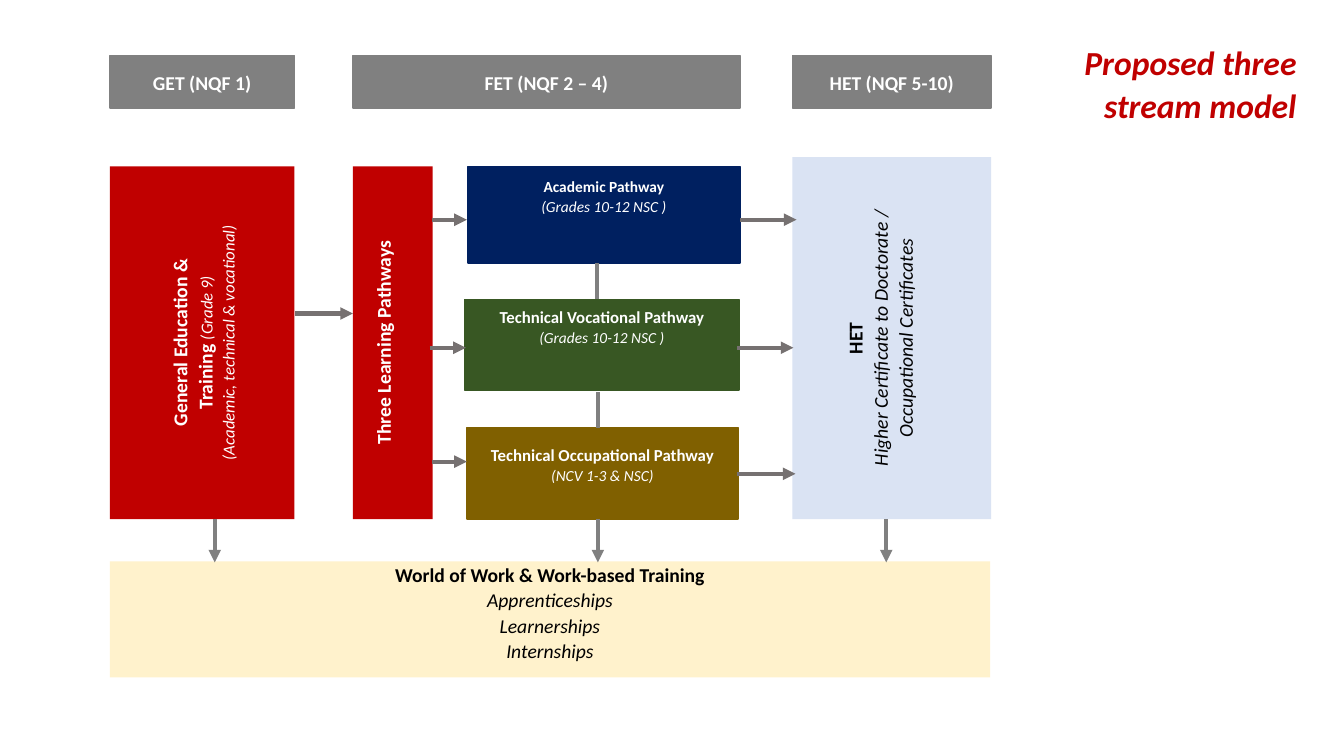
import pptx
import pptx.dml.color
import pptx.enum.shapes
import pptx.enum.text
import pptx.oxml
import pptx.util
from pptx.dml.color import RGBColor
from pptx.util import Inches

RED = RGBColor(0xC0, 0x00, 0x00)
GRAY = RGBColor(0x80, 0x80, 0x80)
ARROW_GRAY = RGBColor(0x76, 0x71, 0x71)
NAVY = RGBColor(0x00, 0x20, 0x60)
GREEN = RGBColor(0x38, 0x57, 0x23)
BROWN = RGBColor(0x80, 0x60, 0x00)
PALE_BLUE = RGBColor(0xDA, 0xE3, 0xF3)
CREAM = RGBColor(0xFF, 0xF2, 0xCC)
WHITE = RGBColor(0xFF, 0xFF, 0xFF)
BLACK = RGBColor(0x00, 0x00, 0x00)

BOLD, ITALIC = "bold", "italic"
ALIGN = pptx.enum.text.PP_ALIGN
ANCHOR = pptx.enum.text.MSO_ANCHOR


class Diagram:
    """Holds the text style and the slide being drawn."""

    font = "Calibri"
    line_spacing = 1.07

    def __init__(self, page):
        self.page = page

    def span(self, para, text, size, style, color):
        span = para.add_run()
        span.text = text
        span.font.name = self.font
        span.font.size = pptx.util.Pt(size)
        span.font.bold = BOLD in style
        span.font.italic = ITALIC in style
        span.font.color.rgb = color

    def title(self, text, left, top, width, height):
        box = self.page.shapes.title
        box.left, box.top = Inches(left), Inches(top)
        box.width, box.height = Inches(width), Inches(height)
        frame = box.text_frame
        frame.word_wrap = True
        frame.auto_size = pptx.enum.text.MSO_AUTO_SIZE.NONE
        frame.vertical_anchor = ANCHOR.TOP
        para = frame.paragraphs[0]
        para.alignment = ALIGN.RIGHT
        para.line_spacing = self.line_spacing
        para.space_before = pptx.util.Pt(2)
        self.span(para, text, 24, (BOLD, ITALIC), RED)

    def box(self, place, fill, lines, color=WHITE, outlined=False,
            upward=False, anchor=ANCHOR.MIDDLE, **margins):
        """Each line is a list of (text, size, style) spans."""
        box = self.page.shapes.add_shape(
            pptx.enum.shapes.MSO_SHAPE.RECTANGLE, *map(Inches, place))
        box.shadow.inherit = False
        box.fill.solid()
        box.fill.fore_color.rgb = fill
        if outlined:
            box.line.color.rgb = fill
            box.line.width = pptx.util.Pt(1)
        else:
            box.line.fill.background()
        frame = box.text_frame
        frame.word_wrap = True
        frame.vertical_anchor = anchor
        for side, inset in margins.items():
            setattr(frame, f"margin_{side}", Inches(inset))
        if upward:
            frame._txBody.bodyPr.set("vert", "vert270")
        for index, spans in enumerate(lines):
            para = frame.add_paragraph() if index else frame.paragraphs[0]
            para.alignment = ALIGN.CENTER
            para.line_spacing = self.line_spacing
            for text, size, style in spans:
                self.span(para, text, size, style, color)

    def link(self, start, end, color, arrow=True):
        line = self.page.shapes.add_connector(
            pptx.enum.shapes.MSO_CONNECTOR.STRAIGHT,
            *map(Inches, (*start, *end)))
        line.line.color.rgb = color
        line.line.width = pptx.util.Pt(3)
        if arrow:
            outline = line.line._get_or_add_ln()
            head = pptx.oxml.xmlchemy.OxmlElement("a:tailEnd")
            head.set("type", "triangle")
            outline.append(head)
        line._element.spPr.append(
            pptx.oxml.xmlchemy.OxmlElement("a:effectLst"))


def main():
    deck = pptx.Presentation()
    deck.slide_width, deck.slide_height = Inches(13.33), Inches(7.5)
    page = deck.slides.add_slide(deck.slide_layouts[5])
    diagram = Diagram(page)
    diagram.title("Proposed three stream model", 10.56, 0.34, 2.4, 0.97)

    # Column headings
    for text, left, width in (("GET (NQF 1)", 1.09, 1.83),
                              ("FET (NQF 2 – 4)", 3.5, 3.84),
                              ("HET (NQF 5-10)", 7.86, 1.97)):
        diagram.box((left, 0.55, width, 0.52), GRAY, [[(text, 14, BOLD)]],
                    outlined=True)

    # Upright columns
    diagram.box((1.09, 1.65, 1.83, 3.5), RED, [
        [("General Education &", 14, BOLD)],
        [("Training ", 14, BOLD), ("(Grade 9)", 12, ITALIC)],
        [("(Academic, technical & vocational)", 12, ITALIC)],
    ], upward=True)
    diagram.box((3.5, 1.65, 0.79, 3.5), RED,
                [[("Three Learning Pathways", 14, BOLD)]],
                upward=True, left=0.05, right=0.26)
    diagram.box((7.86, 1.56, 1.97, 3.59), PALE_BLUE, [
        [("HET", 14, BOLD)],
        [("Higher Certificate to Doctorate / Occupational Certificates",
          14, ITALIC)],
    ], color=BLACK, upward=True, left=0.05, right=0.3)

    # Three pathways
    for place, fill, name, size, grades, bottom in (
            ((4.64, 1.65, 2.7, 0.96), NAVY, "Academic Pathway", 11,
             "(Grades 10-12 NSC )", 0.42),
            ((4.61, 2.97, 2.72, 0.9), GREEN, "Technical Vocational Pathway",
             12, "(Grades 10-12 NSC )", 0.42),
            ((4.63, 4.24, 2.69, 0.91), BROWN,
             "Technical Occupational Pathway", 12, "(NCV 1-3 & NSC)", 0.23)):
        diagram.box(place, fill,
                    [[(name, size, BOLD)], [(grades, 11, ITALIC)]],
                    outlined=True, bottom=bottom)

    # World of work
    work = [[("World of Work & Work-based Training", 14, BOLD)]]
    work += [[(text, 14, ITALIC)]
             for text in ("Apprenticeships", "Learnerships", "Internships")]
    diagram.box((1.09, 5.57, 8.73, 1.15), CREAM, work, color=BLACK,
                anchor=ANCHOR.TOP, top=0)

    # Arrows to the right
    for left, right, y in ((2.93, 3.5, 3.11),
                           (4.28, 4.63, 2.18), (7.34, 7.9, 2.18),
                           (4.26, 4.62, 3.45), (7.31, 7.87, 3.45),
                           (4.28, 4.63, 4.58), (7.31, 7.89, 4.7)):
        diagram.link((left, y), (right, y), ARROW_GRAY)

    # Arrows down to the world of work
    for x in (2.13, 5.93, 8.79):
        diagram.link((x, 5.15), (x, 5.58), GRAY)

    # Plain links between pathways
    for x, top in ((5.92, 2.61), (5.93, 3.89)):
        diagram.link((x, top), (x, top + 0.36), GRAY, arrow=False)

    deck.save("out.pptx")


if __name__ == "__main__":
    main()
